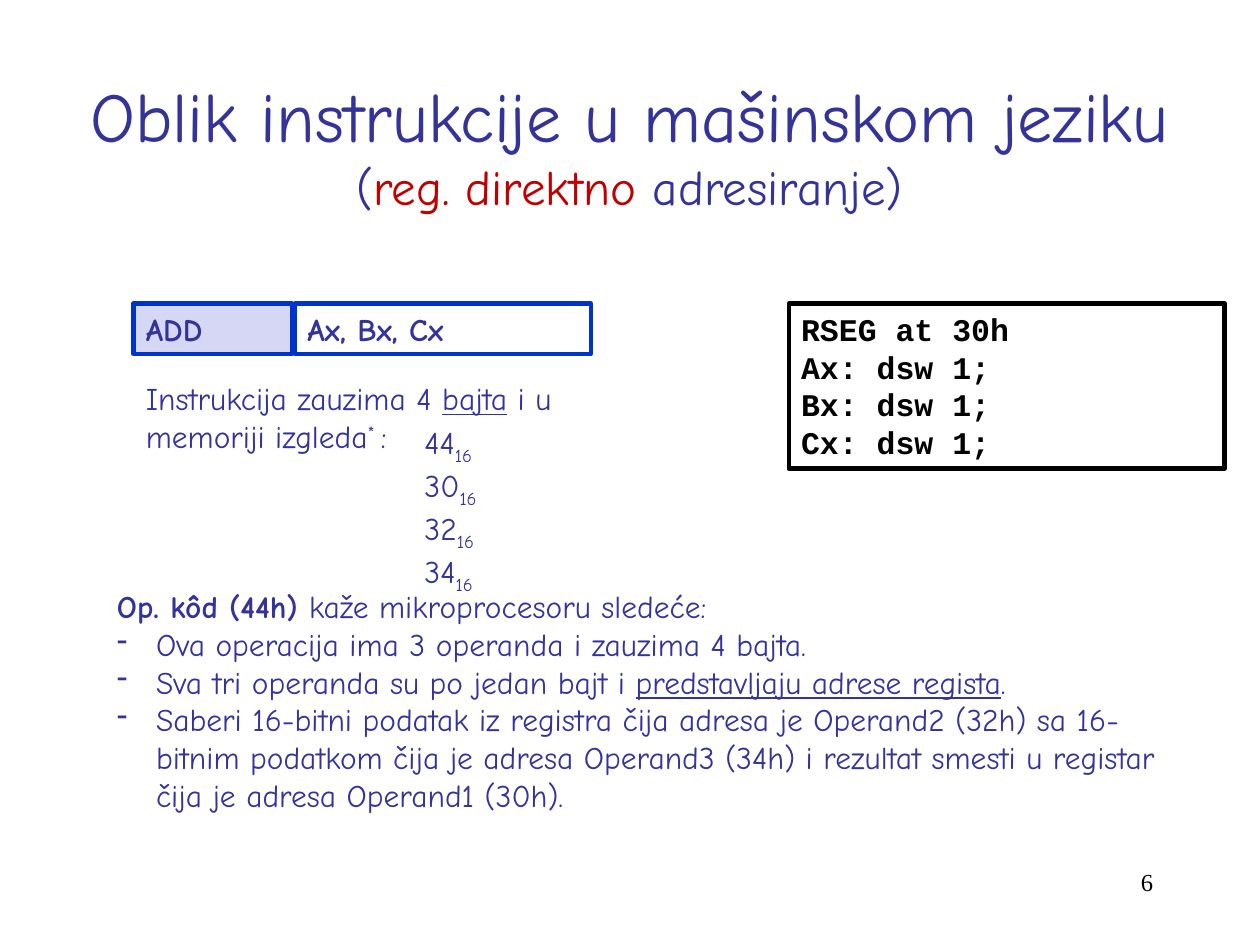
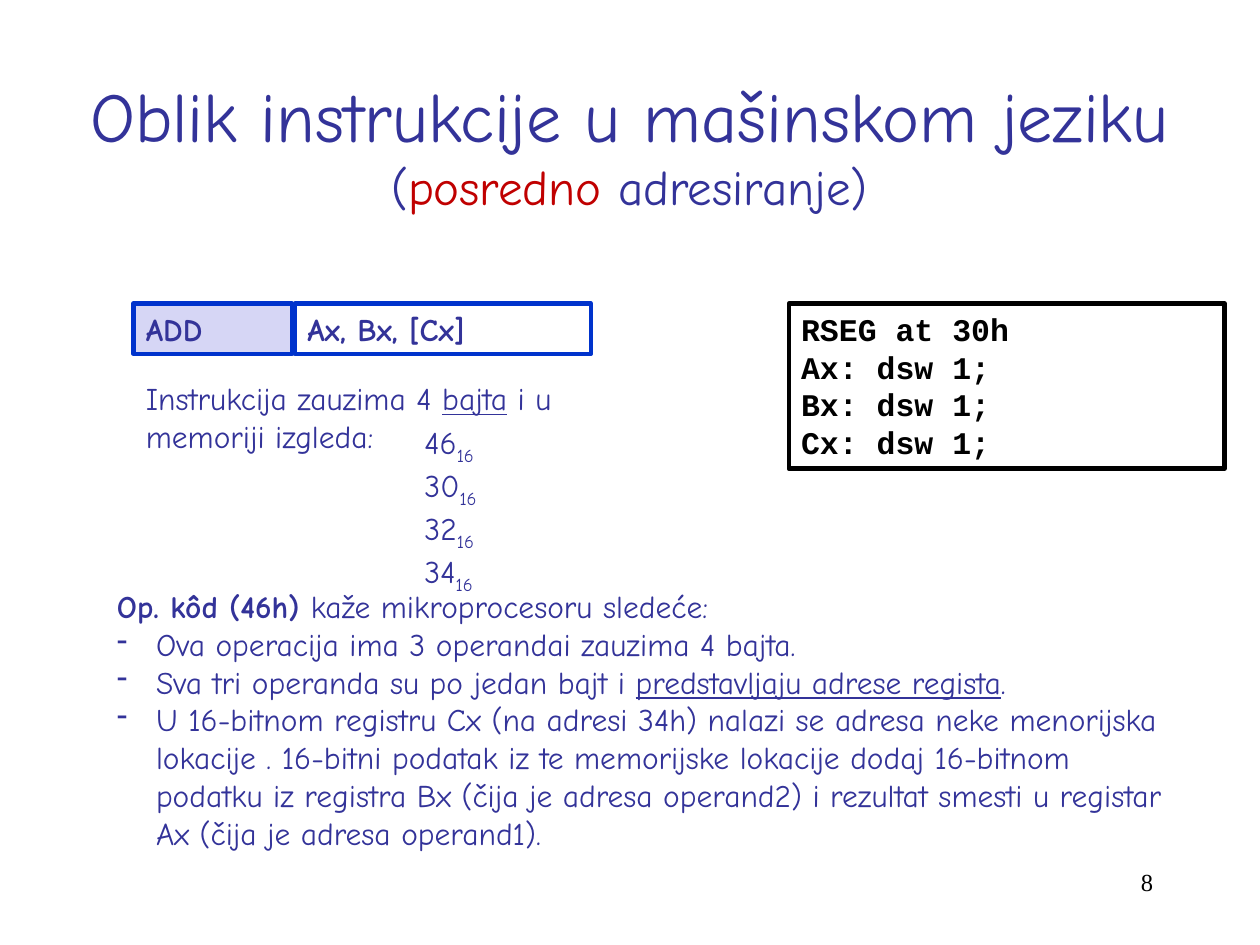
import pptx
import pptx.util
from lxml import etree
from pptx.dml.color import RGBColor
from pptx.enum.shapes import MSO_SHAPE
from pptx.enum.text import MSO_ANCHOR, MSO_AUTO_SIZE, PP_ALIGN
from pptx.oxml.ns import qn

SCALE = 9144  # EMU per px, 100 px to the inch
INDIGO = RGBColor(0x33, 0x33, 0x99)
BLUE = RGBColor(0x00, 0x33, 0xCC)
LAVENDER = RGBColor(0xD6, 0xD6, 0xF5)
RED = RGBColor(0xC0, 0x00, 0x00)
BLACK = RGBColor(0x00, 0x00, 0x00)
WHITE = RGBColor(0xFF, 0xFF, 0xFF)
BODY_FONT, CODE_FONT, NUMBER_FONT = "Comic Neue", "Courier New", "Times New Roman"

BOLD = {"bold": True}
UNDERLINE = {"underline": True}
CODE = {"font": CODE_FONT, "color": BLACK, "bold": True}
REGISTERS = ["RSEG at 30h", "Ax: dsw 1;", "Bx: dsw 1;", "Cx: dsw 1;"]
OPERAND_BYTES = ["30", "32", "34"]


def px(length):
    return pptx.util.Emu(length * SCALE)


class Deck:
    def __init__(self):
        self.presentation = pptx.Presentation()
        self.presentation.slide_width = px(1000)
        self.presentation.slide_height = px(750)
        self.slide = None

    def new_slide(self):
        self.slide = self.presentation.slides.add_slide(self.presentation.slide_layouts[6])

    def format_run(self, run, size=18, font=BODY_FONT, color=INDIGO,
                   bold=False, underline=False, baseline=0):
        run.font.size = pptx.util.Pt(size)
        run.font.name = font
        run.font.color.rgb = color
        run.font.bold = bold
        run.font.underline = underline
        if baseline:
            run._r.get_or_add_rPr().set("baseline", str(baseline * 1000))

    def fill_text(self, shape, paragraphs, align=PP_ALIGN.LEFT, anchor=MSO_ANCHOR.TOP, grow=True):
        """Fill a shape with paragraphs, each a list of (text, style) runs."""
        frame = shape.text_frame
        frame.word_wrap = True
        frame.vertical_anchor = anchor
        frame.auto_size = MSO_AUTO_SIZE.SHAPE_TO_FIT_TEXT if grow else MSO_AUTO_SIZE.NONE
        for index, runs in enumerate(paragraphs):
            paragraph = frame.add_paragraph() if index else frame.paragraphs[0]
            paragraph.alignment = align
            for text, style in runs:
                run = paragraph.add_run()
                run.text = text
                self.format_run(run, **style)

    def text(self, left, top, width, height, paragraphs, **layout):
        shape = self.slide.shapes.add_textbox(px(left), px(top), px(width), px(height))
        self.fill_text(shape, paragraphs, **layout)
        return shape

    def box(self, left, top, width, height, paragraphs, fill=WHITE, line=BLUE):
        shape = self.slide.shapes.add_shape(
            MSO_SHAPE.RECTANGLE, px(left), px(top), px(width), px(height))
        shape.shadow.inherit = False
        shape.fill.solid()
        shape.fill.fore_color.rgb = fill
        shape.line.color.rgb = line
        shape.line.width = pptx.util.Pt(2.5)
        self.fill_text(shape, paragraphs)

    def dash(self, paragraph):
        """Give a paragraph a hanging dash bullet."""
        properties = paragraph._p.get_or_add_pPr()
        properties.set("marL", str(px(31)))
        properties.set("indent", str(px(-31)))
        etree.SubElement(properties, qn("a:buChar")).set("char", "-")

    def title(self, mode):
        self.text(43, 52, 913, 125, [[
            ("Oblik instrukcije u mašinskom jeziku ", {"size": 40}),
            ("(", {"size": 28}),
            (mode + " ", {"size": 28, "color": RED}),
            ("adresiranje)", {"size": 28}),
        ]], align=PP_ALIGN.CENTER, anchor=MSO_ANCHOR.MIDDLE, grow=False)

    def page_number(self, number):
        style = {"size": 14, "font": NUMBER_FONT, "color": BLACK}
        self.text(717, 683, 208, 50, [[(str(number), style)]],
                  align=PP_ALIGN.RIGHT, grow=False)

    def instruction(self, operands):
        self.box(106, 241, 126, 40, [[("ADD", BOLD)]], fill=LAVENDER)
        self.box(234, 241, 235, 40, [[(operands, BOLD)]])

    def memory_bytes(self, opcode):
        self.text(327, 331, 71, 131, [
            [(value, {}), ("16", {"baseline": -25})] for value in [opcode] + OPERAND_BYTES])

    def explanation(self, opcode, height, points):
        heading = [(f"Op. kôd ({opcode}h) ", BOLD), ("kaže mikroprocesoru sledeće:", {})]
        shape = self.text(83, 461, 858, height, [heading] + points)
        for paragraph in shape.text_frame.paragraphs[1:]:
            self.dash(paragraph)

    def addressing_slide(self, number, mode, operands, opcode, ending,
                         size_point, action, height):
        self.new_slide()
        self.title(mode)
        self.page_number(number)
        self.instruction(operands)
        self.text(106, 296, 406, 71, [[
            ("Instrukcija zauzima 4 ", {}), ("bajta", UNDERLINE),
            (" i u memoriji izgleda", {})] + ending])
        self.explanation(opcode, height, [
            [(size_point, {})],
            [("Sva tri operanda su po jedan bajt i ", {}),
             ("predstavljaju adrese regista", UNDERLINE), (".", {})],
            [(action, {})],
        ])
        self.box(626, 241, 346, 131, [[(row, CODE)] for row in REGISTERS], line=BLACK)
        self.memory_bytes(opcode)


def main():
    deck = Deck()
    deck.addressing_slide(
        6, "reg. direktno", "Ax, Bx, Cx", "44",
        ending=[("* ", {"baseline": 30}), (":", {})],
        size_point="Ova operacija ima 3 operanda i zauzima 4 bajta.",
        action="Saberi 16-bitni podatak iz registra čija adresa je Operand2 (32h) sa "
               "16-bitnim podatkom čija je adresa Operand3 (34h) i rezultat smesti u "
               "registar čija je adresa Operand1 (30h).",
        height=192)
    deck.addressing_slide(
        8, "posredno", "Ax, Bx, [Cx]", "46",
        ending=[(":", {})],
        size_point="Ova operacija ima 3 operandai zauzima 4 bajta.",
        action="U 16-bitnom registru Cx (na adresi 34h) nalazi se adresa neke menorijska "
               "lokacije . 16-bitni podatak iz te memorijske lokacije dodaj 16-bitnom "
               "podatku iz registra Bx (čija je adresa operand2) i rezultat smesti u "
               "registar Ax (čija je adresa operand1).",
        height=222)
    deck.presentation.save("out.pptx")


if __name__ == "__main__":
    main()
